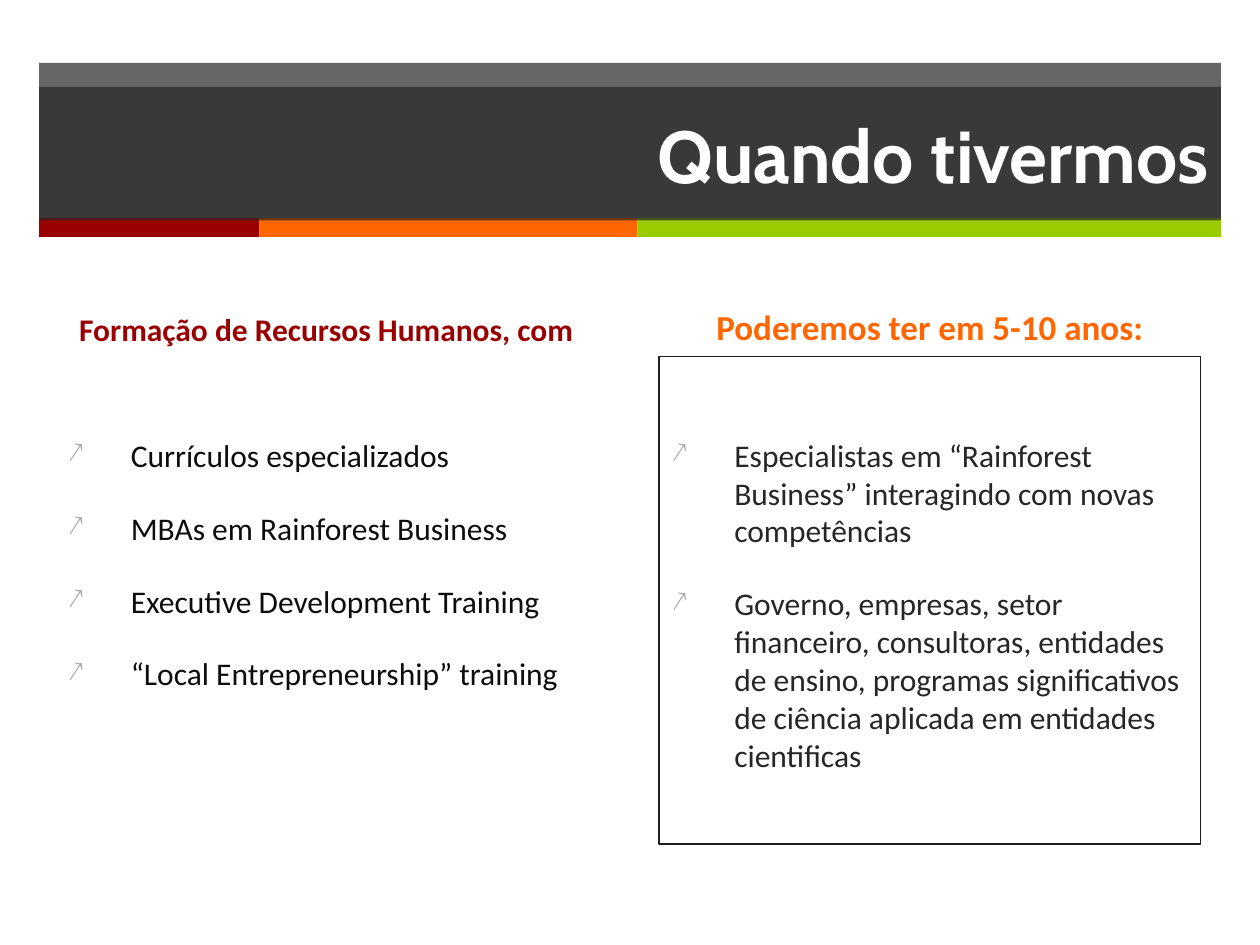
"""Build a two-column slide on training and its expected results."""
from lxml.etree import SubElement
from pptx import Presentation
from pptx.dml.color import RGBColor
from pptx.enum.shapes import MSO_SHAPE
from pptx.enum.text import MSO_ANCHOR, PP_ALIGN
from pptx.oxml.ns import qn
from pptx.util import Inches, Pt

WHITE = RGBColor(0xFF, 0xFF, 0xFF)
CHARCOAL = RGBColor(0x26, 0x26, 0x26)
RED = RGBColor(0x99, 0x00, 0x00)
ORANGE = RGBColor(0xFF, 0x66, 0x00)
GREEN = RGBColor(0x99, 0xCC, 0x00)
NEAR_BLACK = RGBColor(0x0D, 0x0D, 0x0D)
FRAME = RGBColor(0x1C, 0x1D, 0x25)
BULLET_GRAY = RGBColor(0xA6, 0xA6, 0xA6)

deck = Presentation()
deck.slide_width, deck.slide_height = Inches(10), Inches(7.5)
page = deck.slides.add_slide(deck.slide_layouts[6])


def add_box(left, top, width, height, fill=None, alpha=None, line=None):
    box = page.shapes.add_shape(MSO_SHAPE.RECTANGLE, Inches(left), Inches(top), Inches(width), Inches(height))
    box.shadow.inherit = False
    if fill is None:
        box.fill.background()
    else:
        box.fill.solid()
        box.fill.fore_color.rgb = fill
    if alpha:
        color = box.fill._xPr.find(qn("a:solidFill"))[0]
        SubElement(color, qn("a:alpha"), val=str(alpha * 1000))
    if line is None:
        box.line.fill.background()
    else:
        box.line.color.rgb = line
        box.line.width = Pt(0.75)
    box.text_frame.word_wrap = True
    return box


def set_text(para, text, name, size, color, bold, align):
    para.text = text
    para.alignment = align
    para.font.name = name
    para.font.size = Pt(size)
    para.font.color.rgb = color
    para.font.bold = bold


add_box(0.31, 0.5, 9.38, 1.24, CHARCOAL, 70)
left = 0.31
for width, color in ((1.75, RED), (3, ORANGE), (4.63, GREEN)):
    add_box(left, 1.73, width, 0.15, color)
    left += width

title = add_box(0.31, 0.69, 9.38, 1.06, CHARCOAL, 70)
title.text_frame.vertical_anchor = MSO_ANCHOR.MIDDLE
set_text(title.text_frame.paragraphs[0], "Quando tivermos", "Cabin", 42, WHITE, True, PP_ALIGN.RIGHT)

columns = (
    (0.44, "Formação de Recursos Humanos, com", 18, RED, WHITE, NEAR_BLACK, (
        "Currículos especializados",
        "MBAs em Rainforest Business",
        "Executive Development Training",
        "“Local Entrepreneurship” training",
    )),
    (5.23, "Poderemos ter em 5-10 anos:", 20, ORANGE, FRAME, CHARCOAL, (
        "Especialistas em “Rainforest Business” interagindo com novas competências",
        "Governo, empresas, setor financeiro, consultoras, entidades de ensino, "
        "programas significativos de ciência aplicada em entidades cientificas",
    )),
)
for left, heading, size, heading_color, line, text_color, items in columns:
    box = page.shapes.add_textbox(Inches(left), Inches(1.9), Inches(4.3), Inches(0.91))
    box.text_frame.word_wrap = True
    box.text_frame.vertical_anchor = MSO_ANCHOR.BOTTOM
    set_text(box.text_frame.paragraphs[0], heading, "Calibri", size, heading_color, True, PP_ALIGN.CENTER)

    frame = add_box(left, 2.83, 4.3, 3.87, line=line).text_frame
    frame.vertical_anchor = MSO_ANCHOR.TOP
    frame.margin_top = Inches(0.63)
    for index, item in enumerate(items):
        para = frame.add_paragraph() if index else frame.paragraphs[0]
        set_text(para, item, "Calibri", 18, text_color, False, PP_ALIGN.LEFT)
        para.space_before = Pt(20 if index else 0)
        properties = para._p.get_or_add_pPr()
        properties.set("marL", str(Inches(0.5)))
        properties.set("indent", str(-Inches(0.5)))
        bullet_color = properties.makeelement(qn("a:buClr"))
        SubElement(bullet_color, qn("a:srgbClr"), val=str(BULLET_GRAY))
        bullet_size = properties.makeelement(qn("a:buSzPct"), val="90000")
        bullet = properties.makeelement(qn("a:buChar"), char="↗")
        for element in (bullet_color, bullet_size, bullet):
            properties.find(qn("a:defRPr")).addprevious(element)

deck.save("out.pptx")
